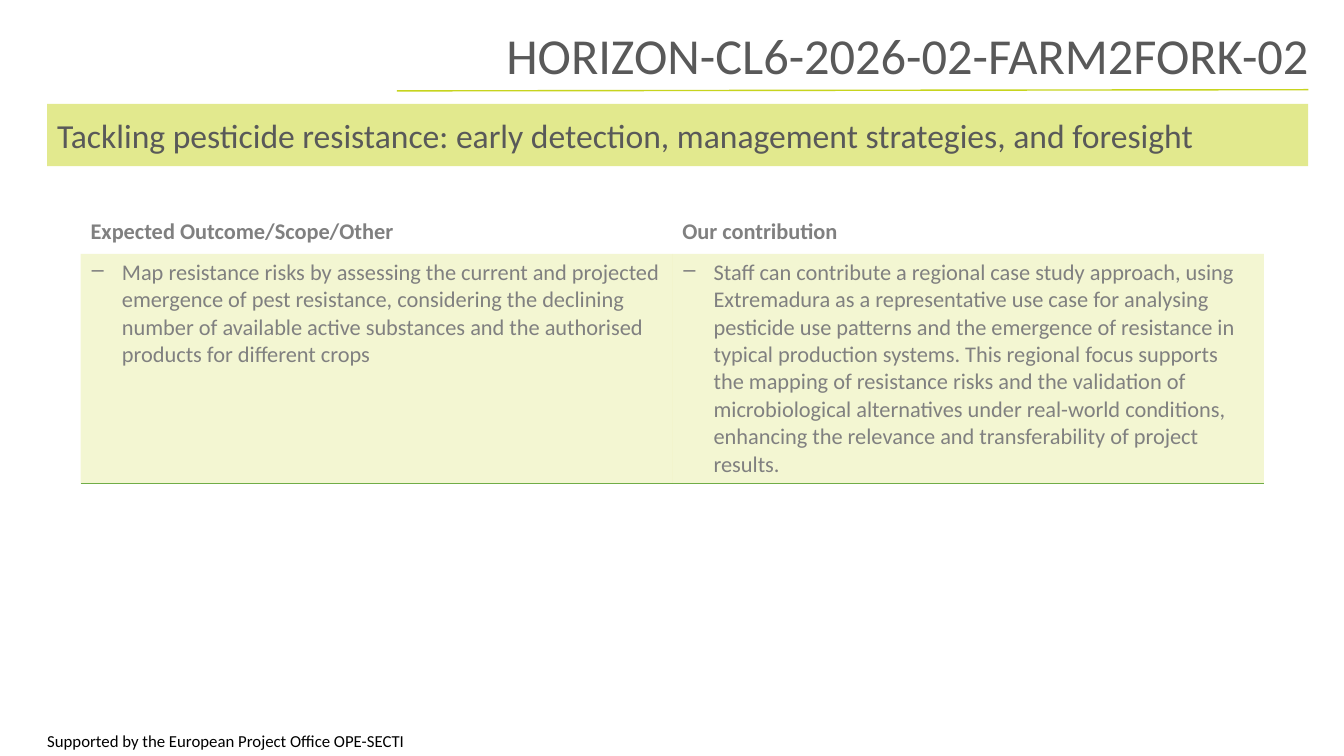
from dataclasses import dataclass

from lxml.etree import SubElement
from pptx import Presentation
from pptx.dml.color import RGBColor
from pptx.enum.shapes import MSO_CONNECTOR, MSO_SHAPE
from pptx.enum.text import MSO_ANCHOR, MSO_AUTO_SIZE, PP_ALIGN
from pptx.oxml import parse_xml
from pptx.oxml.ns import nsdecls, qn
from pptx.util import Cm, Pt


@dataclass(frozen=True)
class Theme:
    font: str = "Calibri"
    lime: str = "C7D41E"
    green: str = "70AD47"
    heading: str = "595959"
    body: str = "808080"
    footer: str = "000000"
    title_size: int = 36
    topic_size: int = 24
    table_size: int = 16
    footer_size: int = 12


THEME = Theme()
NO_TABLE_STYLE = "{2D5ABB26-0587-4C30-8999-92F81FD0307C}"
TABLE_ROWS = [
    ["Expected Outcome/Scope/Other", "Our contribution"],
    [
        "Map resistance risks by assessing the current and projected emergence of pest "
        "resistance, considering the declining number of available active substances and "
        "the authorised products for different crops",
        "Staff can contribute a regional case study approach, using Extremadura as a "
        "representative use case for analysing pesticide use patterns and the emergence "
        "of resistance in typical production systems. This regional focus supports the "
        "mapping of resistance risks and the validation of microbiological alternatives "
        "under real-world conditions, enhancing the relevance and transferability of "
        "project results.",
    ],
]


def add_span(para, text, size, color, bold=False):
    span = para.add_run()
    span.text = text
    span.font.name = THEME.font
    span.font.size = Pt(size)
    span.font.bold = bold
    span.font.color.rgb = RGBColor.from_string(color)


def fill_lime(fill, opacity):
    fill.solid()
    fill.fore_color.rgb = RGBColor.from_string(THEME.lime)
    color = fill._xPr.find(qn("a:solidFill"))[0]
    SubElement(color, qn("a:alpha")).set("val", str(opacity * 1000))


def add_title(page, left, top, width, height):
    title = page.shapes.title
    title.left, title.top, title.width, title.height = left, top, width, height
    frame = title.text_frame
    frame.word_wrap = True
    frame.auto_size = MSO_AUTO_SIZE.NONE
    frame.vertical_anchor = MSO_ANCHOR.BOTTOM
    para = frame.paragraphs[0]
    para.alignment = PP_ALIGN.RIGHT
    para.line_spacing = 0.9
    add_span(para, "HORIZON-CL6-2026-02-FARM2FORK-02", THEME.title_size, THEME.heading)


def add_title_rule(page, left, right, top):
    rule = page.shapes.add_connector(
        MSO_CONNECTOR.STRAIGHT, left, top, right, top - Cm(0.03))
    rule.line.color.rgb = RGBColor.from_string(THEME.lime)
    rule.line.width = Pt(1)
    SubElement(rule._element.spPr, qn("a:effectLst"))


def add_topic_band(page, left, top, width, height):
    band = page.shapes.add_shape(MSO_SHAPE.RECTANGLE, left, top, width, height)
    band.shadow.inherit = False
    fill_lime(band.fill, 50)
    band.line.fill.background()
    frame = band.text_frame
    frame.word_wrap = True
    frame.vertical_anchor = MSO_ANCHOR.MIDDLE
    para = frame.paragraphs[0]
    para.alignment = PP_ALIGN.LEFT
    add_span(
        para,
        "Tackling pesticide resistance: early detection, management strategies, and foresight",
        THEME.topic_size, THEME.heading)


def format_body_cell(cell, para):
    # Dash bullet with a hanging indent
    properties = para._p.get_or_add_pPr()
    properties.set("marL", str(Cm(0.79)))
    properties.set("indent", str(-Cm(0.79)))
    SubElement(properties, qn("a:buChar")).set("char", "‒")
    # Tinted fill and green bottom border
    fill_lime(cell.fill, 20)
    cell._tc.get_or_add_tcPr().insert(0, parse_xml(
        f'<a:lnB {nsdecls("a")} w="{Pt(1)}"><a:solidFill>'
        f'<a:srgbClr val="{THEME.green}"/></a:solidFill></a:lnB>'))


def add_contribution_table(page, left, top, width, height):
    frame = page.shapes.add_table(
        len(TABLE_ROWS), len(TABLE_ROWS[0]), left, top, width, height)
    table = frame.table
    table.horz_banding = False
    table._tbl.tblPr.find(qn("a:tableStyleId")).text = NO_TABLE_STYLE
    table.rows[0].height = Cm(1.04)
    table.rows[1].height = height - Cm(1.04)
    for row_index, texts in enumerate(TABLE_ROWS):
        is_header = row_index == 0
        for column_index, text in enumerate(texts):
            cell = table.cell(row_index, column_index)
            para = cell.text_frame.paragraphs[0]
            if is_header:
                cell.fill.background()
            else:
                format_body_cell(cell, para)
            add_span(para, text, THEME.table_size, THEME.body, bold=is_header)


def add_footer(page, left, top, width, height):
    box = page.shapes.add_textbox(left, top, width, height)
    box.text_frame.word_wrap = True
    para = box.text_frame.paragraphs[0]
    para.line_spacing = 1.1
    add_span(para, "Supported by the European Project Office OPE-SECTI",
             THEME.footer_size, THEME.footer)


def build_topic_page(deck):
    page = deck.slides.add_slide(deck.slide_layouts.get_by_name("Title Only"))
    band_left, band_width = Cm(1.19), Cm(31.78)
    # Heading
    add_title(page, Cm(11.18), Cm(0.46), Cm(22.07), Cm(1.83))
    add_title_rule(page, Cm(10), band_left + band_width, Cm(2.29))
    add_topic_band(page, band_left, Cm(2.62), band_width, Cm(1.57))
    # Content and footer
    add_contribution_table(page, Cm(2.03), Cm(5.36), Cm(29.82), Cm(6.7))
    add_footer(page, Cm(0.94), Cm(18.24), Cm(9.86), Cm(0.81))


def main():
    deck = Presentation()
    deck.slide_width, deck.slide_height = Cm(33.87), Cm(19.05)
    build_topic_page(deck)
    deck.save("out.pptx")


if __name__ == "__main__":
    main()
